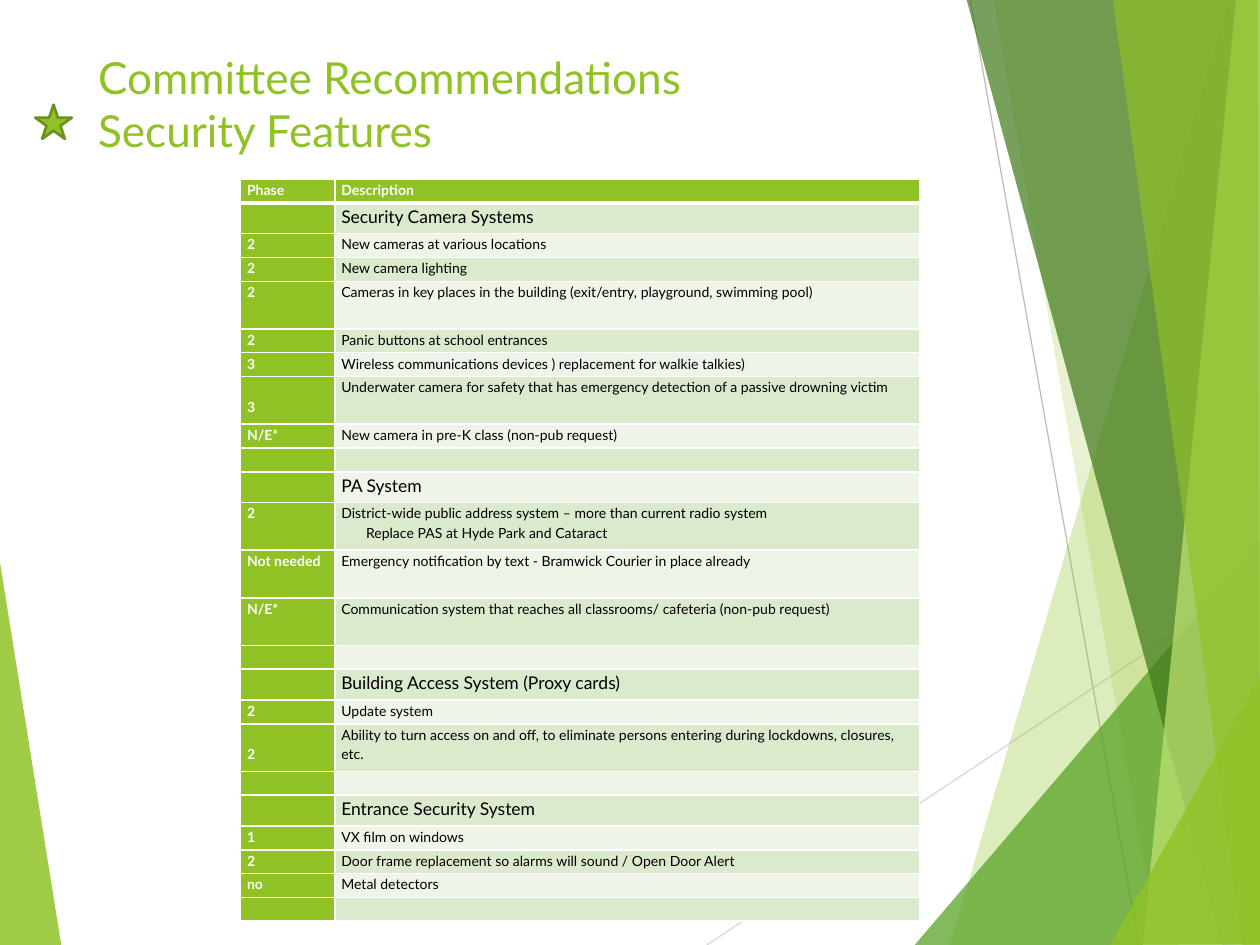
from dataclasses import dataclass
from typing import Iterator

from lxml import etree
from pptx import Presentation
from pptx import util as u
from pptx.dml.color import RGBColor
from pptx.enum import shapes, text
from pptx.oxml import ns

GREEN, WHITE, BLACK = "90C226", "FFFFFF", "000000"
BANDS = ("EEF4E8", "DBE9CD")
FONT = "Lato"
SINGLE, HEADING, DOUBLE = 0.48, 0.62, 0.96  # row heights in cm


@dataclass
class Facet:
    color: str
    opacity: int
    points: list[tuple[float, float]]


@dataclass
class Line:
    color: str
    start: tuple[float, float]
    end: tuple[float, float]


@dataclass
class Row:
    phase: str = ""
    description: str = ""
    height: float = SINGLE
    phase_offset: float = 0
    detail: str = ""


LEFT_FACET = Facet(GREEN, 85, [(-0.03, 11.15), (1.24, 19.08), (-0.03, 19.05)])
LINES = [
    Line("D9D9D9", (14.25, 19.05), (25.43, 11.61)),
    Line("BFBFBF", (19.56, 0), (22.96, 19.05)),
]
RIGHT_FACETS = [
    Facet(GREEN, 30, [(24.77, 0), (19.15, 19.05), (25.45, 19.08), (25.43, 0.03)]),
    Facet(GREEN, 20, [(20.02, -0.03), (23.34, 19.05), (25.43, 19.05), (25.43, -0.03)]),
    Facet("54A021", 72, [(18.44, 19.05), (25.4, 10.9), (25.43, 19.05)]),
    Facet("3F7819", 70, [(19.48, -0.03), (24.64, 19.05), (25.43, 19.02), (25.43, -0.03)]),
    Facet("C0E474", 70, [(24.92, -0.03), (23.04, 19.05), (25.43, 19.05), (25.4, -0.03)]),
    Facet(GREEN, 65, [(22.43, -0.03), (25.04, 19.05), (25.4, 19.05), (25.35, -0.03)]),
    Facet(GREEN, 80, [(22.38, 19.05), (25.43, 13.59), (25.43, 19.03)]),
]
ROWS = [
    Row("Phase", "Description"),
    Row("", "Security Camera Systems", HEADING),
    Row("2", "New cameras at various locations"),
    Row("2", "New camera lighting"),
    Row("2", "Cameras in key places in the building (exit/entry, playground, swimming pool)", DOUBLE),
    Row("2", "Panic buttons at school entrances"),
    Row("3", "Wireless communications devices ) replacement for walkie talkies)"),
    Row("3", "Underwater camera for safety that has emergency detection of a passive drowning victim",
        DOUBLE, phase_offset=0.4),
    Row("N/E*", "New camera in pre-K class (non-pub request)"),
    Row(),
    Row("", "PA System", HEADING),
    Row("2", "District-wide public address system – more than current radio system",
        DOUBLE, detail="Replace PAS at Hyde Park and Cataract"),
    Row("Not needed", "Emergency notification by text - Bramwick Courier in place already", DOUBLE),
    Row("N/E*", "Communication system that reaches all classrooms/ cafeteria (non-pub request)", DOUBLE),
    Row(),
    Row("", "Building Access System (Proxy cards)", HEADING),
    Row("2", "Update system"),
    Row("2", "Ability to turn access on and off, to eliminate persons entering during lockdowns, closures, etc.",
        DOUBLE, phase_offset=0.4),
    Row(),
    Row("", "Entrance Security System", HEADING),
    Row("1", "VX film on windows"),
    Row("2", "Door frame replacement so alarms will sound / Open Door Alert"),
    Row("no", "Metal detectors"),
    Row(),
]


def rgb(color: str) -> RGBColor:
    return RGBColor.from_string(color)


def to_cm(values) -> Iterator[u.Cm]:
    return (u.Cm(value) for value in values)


def fill_solid(shape, color: str) -> None:
    shape.fill.solid()
    shape.fill.fore_color.rgb = rgb(color)


def add_facet(slide, facet: Facet) -> None:
    start, *rest = [tuple(to_cm(point)) for point in facet.points]
    builder = slide.shapes.build_freeform(*start)
    builder.add_line_segments(rest)
    shape = builder.convert_to_shape()
    shape.shadow.inherit = False
    fill_solid(shape, facet.color)
    shape.line.fill.background()
    color = shape.fill._xPr.find(".//" + ns.qn("a:srgbClr"))
    etree.SubElement(color, ns.qn("a:alpha"), val=str(facet.opacity * 1000))


def add_line(slide, line: Line) -> None:
    connector = slide.shapes.add_connector(
        shapes.MSO_CONNECTOR.STRAIGHT, *to_cm(line.start + line.end))
    connector.line.color.rgb = rgb(line.color)
    connector.line.width = u.Pt(0.75)
    etree.SubElement(connector._element.spPr, ns.qn("a:effectLst"))


def add_run(paragraph, words: str, size: float, color: str, bold: bool = False) -> None:
    run = paragraph.add_run()
    run.text = words
    run.font.name = FONT
    run.font.size = u.Pt(size)
    run.font.bold = bold
    run.font.color.rgb = rgb(color)


def add_title(slide) -> None:
    frame = slide.shapes.add_textbox(*to_cm((1.73, 0.86, 17.63, 2.46))).text_frame
    frame.word_wrap = True
    frame.vertical_anchor = text.MSO_ANCHOR.MIDDLE
    paragraph = frame.paragraphs[0]
    add_run(paragraph, "Committee Recommendations ", 25.2, GREEN)
    paragraph.add_line_break()
    add_run(paragraph, "Security Features", 25.2, GREEN)


def set_borders(cell, top: float, bottom: float) -> None:
    """Give a cell white borders; widths are in points."""
    properties = cell._tc.get_or_add_tcPr()
    widths = {"lnL": 1, "lnR": 1, "lnT": top, "lnB": bottom}
    for index, (side, width) in enumerate(widths.items()):
        border = etree.Element(ns.qn("a:" + side), w=str(u.Pt(width)))
        fill = etree.SubElement(border, ns.qn("a:solidFill"))
        etree.SubElement(fill, ns.qn("a:srgbClr"), val=WHITE)
        properties.insert(index, border)


def fill_cell(cell, words: str, size: float, color: str, bold: bool, background: str) -> None:
    cell.margin_left = cell.margin_right = u.Cm(0.13)
    cell.margin_top = cell.margin_bottom = 0
    fill_solid(cell, background)
    paragraph = cell.text_frame.paragraphs[0]
    paragraph.line_spacing = 1.15
    if words:
        add_run(paragraph, words, size, color, bold)
    else:
        # Keeps an empty row from growing to the default text size
        etree.SubElement(paragraph._p, ns.qn("a:endParaRPr"), sz=str(size * 100))


def add_detail(cell, words: str) -> None:
    """Add an indented second paragraph to a cell."""
    paragraph = cell.text_frame.add_paragraph()
    paragraph.line_spacing = 1.15
    paragraph._p.get_or_add_pPr().set("marL", str(u.Cm(0.5)))
    add_run(paragraph, words, 8, BLACK)


def add_features_table(slide) -> None:
    widths = (1.9, 11.79)
    height = sum(row.height for row in ROWS)
    table = slide.shapes.add_table(
        len(ROWS), len(widths), *to_cm((4.85, 3.61, sum(widths), height))).table
    for column, width in zip(table.columns, widths):
        column.width = u.Cm(width)
    for index, row in enumerate(ROWS):
        header = index == 0
        table.rows[index].height = u.Cm(row.height)
        phase, description = table.cell(index, 0), table.cell(index, 1)
        fill_cell(phase, row.phase, 8, WHITE, True, GREEN)
        phase.margin_top = u.Cm(row.phase_offset)
        fill_cell(description, row.description, 10 if row.height == HEADING else 8,
                  WHITE if header else BLACK, header, GREEN if header else BANDS[index % 2])
        if row.detail:
            add_detail(description, row.detail)
        for cell in (phase, description):
            set_borders(cell, top=3 if index == 1 else 1, bottom=3 if header else 1)


def add_star(slide) -> None:
    star = slide.shapes.add_shape(
        shapes.MSO_SHAPE.STAR_5_POINT, *to_cm((0.71, 2.11, 0.74, 0.69)))
    star.shadow.inherit = False
    fill_solid(star, GREEN)
    star.line.color.rgb = rgb("6B901C")
    star.line.width = u.Pt(1.5)


def main() -> None:
    presentation = Presentation()
    presentation.slide_width, presentation.slide_height = u.Cm(25.4), u.Cm(19.05)
    slide = presentation.slides.add_slide(presentation.slide_layouts[6])
    add_facet(slide, LEFT_FACET)
    for line in LINES:
        add_line(slide, line)
    for facet in RIGHT_FACETS:
        add_facet(slide, facet)
    add_title(slide)
    add_features_table(slide)
    add_star(slide)
    presentation.save("out.pptx")


if __name__ == "__main__":
    main()
